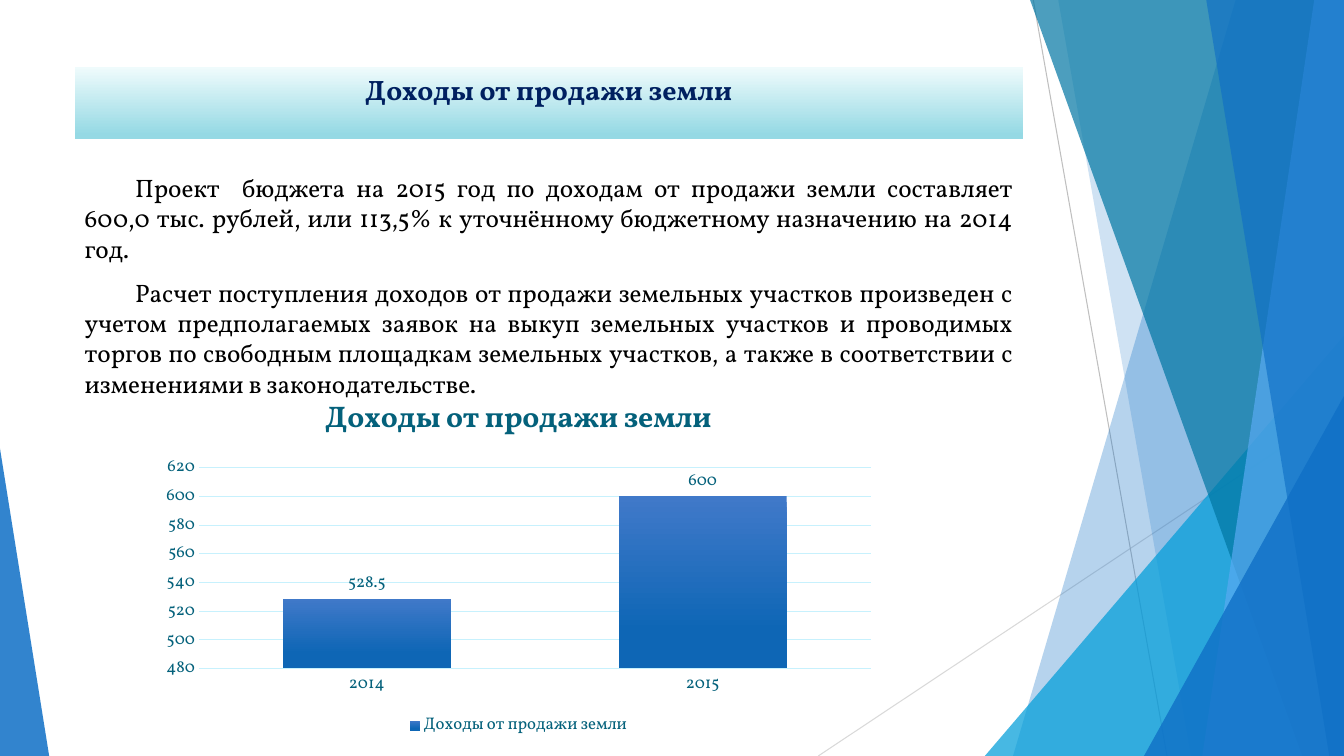
"""Build a slide on income from land sales with a column chart."""
from lxml.etree import SubElement
from pptx import Presentation
from pptx.chart.data import CategoryChartData
from pptx.dml.color import RGBColor
from pptx.enum.chart import XL_CHART_TYPE as ChartType, XL_LABEL_POSITION as LabelPosition
from pptx.enum.chart import XL_LEGEND_POSITION as LegendPosition, XL_TICK_MARK as TickMark
from pptx.enum.shapes import MSO_CONNECTOR as Connector
from pptx.enum.text import MSO_ANCHOR as Anchor, MSO_AUTO_SIZE as AutoSize, PP_ALIGN as Align
from pptx.oxml.ns import qn
from pptx.util import Cm, Pt

WIDTH, HEIGHT = 33.87, 19.05
FONT = "Vollkorn"
NAVY, BLACK, TEAL, PALE = "002060", "000000", "04617B", "C7F1FD"
HEADING = "Доходы от продажи земли"
PARAGRAPHS = [
    "Проект  бюджета на 2015 год по доходам от продажи земли составляет 600,0 тыс. рублей, "
    "или 113,5% к уточнённому бюджетному назначению на 2014 год.",
    "Расчет поступления доходов от продажи земельных участков произведен с учетом "
    "предполагаемых заявок на выкуп земельных участков и проводимых торгов по свободным "
    "площадкам земельных участков, а также в соответствии с изменениями в законодательстве.",
]
INCOME = {"2014": 528.5, "2015": 600}
TITLE_AREA = (1.88, 1.7, 23.9, 1.8)
BODY_AREA = (1.88, 4.22, 23.9, 13.23)
CHART_AREA = (3.82, 9.51, 18.49, 9.17)
TITLE_STOPS = [(0, "EFFBFC"), (0.94, "95D9E4")]
COLUMN_STOPS = [(0, "4079C9"), (0.78, "0E66B5")]
RAYS = [
    ((20.62, HEIGHT), (WIDTH, 10.24), "D9D9D9"),
    ((26.04, 0), (29.41, HEIGHT), "BFBFBF"),
]
RIGHT_EDGE = [(WIDTH, HEIGHT), (WIDTH, 0)]
FACETS = [
    ([(31.14, 0), (25.53, HEIGHT), *RIGHT_EDGE], "0F6FC6", 30),
    ([(26.67, 0), (30.02, HEIGHT), *RIGHT_EDGE], "0F6FC6", 20),
    ([(24.82, HEIGHT), (WIDTH, 8.46), (WIDTH, HEIGHT)], "009DD9", 72),
    ([(25.96, 0), (32.82, HEIGHT), *RIGHT_EDGE], "0076A3", 70),
    ([(33.12, 0), (30.3, HEIGHT), *RIGHT_EDGE], "59AAF2", 70),
    ([(30.4, 0), (33.5, HEIGHT), *RIGHT_EDGE], "0F6FC6", 65),
    ([(28.83, HEIGHT), (WIDTH, 9.98), (WIDTH, HEIGHT)], "0F6FC6", 80),
    ([(0, 11.3), (1.24, HEIGHT), (0, HEIGHT)], "0F6FC6", 85),
]


def color(value):
    return RGBColor.from_string(value)


def style_font(font, size, tint, bold=False):
    font.name, font.size, font.bold = FONT, Pt(size), bold
    font.color.rgb = color(tint)


def write(para, text, size, tint, bold=False, align=None, before=0):
    span = para.add_run()
    span.text = text
    style_font(span.font, size, tint, bold)
    para.alignment, para.space_before, para.line_spacing = align, Pt(before), 1.0


def fill_gradient(fill, stops):
    fill.gradient()
    fill.gradient_angle = 270
    for stop, (position, tint) in zip(fill.gradient_stops, stops):
        stop.position = position
        stop.color.rgb = color(tint)


def place(box, area):
    box.left, box.top, box.width, box.height = map(Cm, area)
    frame = box.text_frame
    frame.word_wrap, frame.auto_size = True, AutoSize.NONE
    frame.vertical_anchor = Anchor.TOP
    return frame


def add_ray(page, start, end, tint):
    ray = page.shapes.add_connector(Connector.STRAIGHT, *map(Cm, start + end))
    ray.line.color.rgb, ray.line.width = color(tint), Pt(0.75)
    SubElement(ray.element.spPr, qn("a:effectLst"))


def add_facet(page, corners, tint, opacity):
    points = [(Cm(x), Cm(y)) for x, y in corners]
    builder = page.shapes.build_freeform(*points[0])
    builder.add_line_segments(points[1:])
    facet = builder.convert_to_shape()
    facet.shadow.inherit = False
    facet.line.fill.background()
    facet.fill.solid()
    facet.fill.fore_color.rgb = color(tint)
    tone = facet.element.spPr.find(qn("a:solidFill")).find(qn("a:srgbClr"))
    SubElement(tone, qn("a:alpha"), val=str(opacity * 1000))


def fill_text(page):
    title, body = page.shapes.title, page.placeholders[1]
    write(place(title, TITLE_AREA).paragraphs[0], HEADING, 20, NAVY, bold=True, align=Align.CENTER)
    fill_gradient(title.fill, TITLE_STOPS)
    frame = place(body, BODY_AREA)
    for index, text in enumerate(PARAGRAPHS):
        para = frame.add_paragraph() if index else frame.paragraphs[0]
        write(para, text, 18, BLACK, align=Align.JUSTIFY, before=10)
        props = para._p.get_or_add_pPr()
        props.set("marL", "0")
        props.set("indent", str(Cm(1.27)))
        SubElement(props, qn("a:buNone"))
    for box in (title, body):
        page.shapes.element.append(box.element)


def add_income_chart(page):
    data = CategoryChartData()
    data.categories = list(INCOME)
    data.add_series(HEADING, list(INCOME.values()))
    frame = page.shapes.add_chart(ChartType.COLUMN_CLUSTERED, *map(Cm, CHART_AREA), data)
    chart = frame.chart
    style_font(chart.font, 12, TEAL)
    write(chart.chart_title.text_frame.paragraphs[0], HEADING, 21.3, TEAL, bold=True)
    chart.chart_title.include_in_layout = False
    chart.has_legend = True
    chart.legend.position = LegendPosition.BOTTOM
    chart.legend.include_in_layout = False
    style_font(chart.legend.font, 12, TEAL)

    years, amounts = chart.category_axis, chart.value_axis
    for axis in (years, amounts):
        axis.major_tick_mark = axis.minor_tick_mark = TickMark.NONE
        style_font(axis.tick_labels.font, 12, TEAL)
    amounts.minimum_scale, amounts.maximum_scale, amounts.major_unit = 480, 620, 20
    amounts.has_major_gridlines = True
    amounts.format.line.fill.background()
    for line in (years.format.line, amounts.major_gridlines.format.line):
        line.color.rgb, line.width = color(PALE), Pt(0.75)

    plot = chart.plots[0]
    plot.gap_width, plot.overlap, plot.vary_by_categories = 100, -24, False
    fill_gradient(plot.series[0].format.fill, COLUMN_STOPS)
    plot.has_data_labels = True
    labels = plot.data_labels
    labels.show_value, labels.position = True, LabelPosition.OUTSIDE_END
    style_font(labels.font, 12, TEAL)


def main():
    deck = Presentation()
    deck.slide_width, deck.slide_height = Cm(WIDTH), Cm(HEIGHT)
    page = deck.slides.add_slide(deck.slide_layouts[1])
    for ray in RAYS:
        add_ray(page, *ray)
    for facet in FACETS:
        add_facet(page, *facet)
    fill_text(page)
    add_income_chart(page)
    deck.save("out.pptx")


if __name__ == "__main__":
    main()
